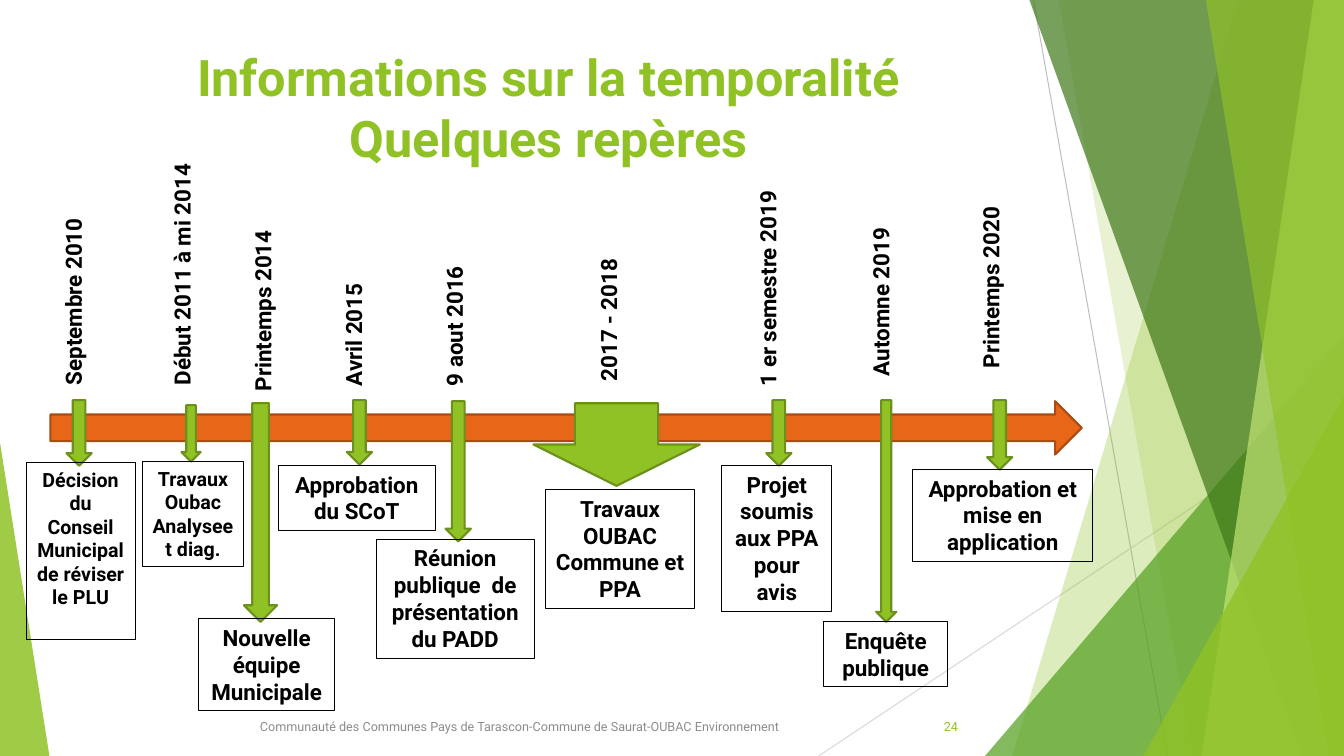
"""Draw a timeline of planning milestones."""
from dataclasses import dataclass

from lxml.etree import SubElement
from pptx import Presentation
from pptx.dml.color import RGBColor
from pptx.enum.shapes import MSO_CONNECTOR, MSO_SHAPE
from pptx.enum.text import MSO_ANCHOR, PP_ALIGN
from pptx.oxml.ns import qn
from pptx.util import Inches, Pt

Box = tuple[float, float, float, float]
WIDTH, HEIGHT = 13.33, 7.5
FONT = "Roboto"
BLACK = RGBColor(0x00, 0x00, 0x00)
GRAY = RGBColor(0x8C, 0x8C, 0x8C)
SILVER = RGBColor(0xBF, 0xBF, 0xBF)
PALE = RGBColor(0xD9, 0xD9, 0xD9)
LIME = RGBColor(0x90, 0xC2, 0x26)
OLIVE = RGBColor(0x6B, 0x90, 0x1C)
GREEN = RGBColor(0x54, 0xA0, 0x21)
FOREST = RGBColor(0x3F, 0x78, 0x19)
MINT = RGBColor(0xC0, 0xE4, 0x74)
ORANGE = RGBColor(0xE7, 0x66, 0x18)
RUST = RGBColor(0xAB, 0x4B, 0x12)


@dataclass
class Band:
    top: float
    base: float
    color: RGBColor
    alpha: int


@dataclass
class Wedge:
    box: Box
    peak: float
    color: RGBColor
    alpha: int


@dataclass
class Event:
    date: str
    label: Box
    arrow: Box
    text: str
    frame: Box
    size: int = 16


BANDS = [
    Band(12.28, 10.04, LIME, 30),
    Band(10.5, 11.83, LIME, 20),
    Wedge((9.77, 3.33, 3.56, 4.17), 1, GREEN, 72),
    Band(10.21, 12.91, FOREST, 70),
    Band(13.03, 11.92, MINT, 70),
    Band(11.96, 13.18, LIME, 65),
    Wedge((11.34, 3.93, 1.99, 3.57), 1, LIME, 80),
    Wedge((0, 4.39, 0.49, 3.11), 0, LIME, 85),
]

EVENTS = [
    Event("Septembre 2010", (0.54, 1.83, 0.47, 2.09), (0.66, 3.97, 0.25, 0.65),
          "Décision du Conseil Municipal de réviser le PLU", (0.26, 4.59, 1.08, 1.75), 14),
    Event("Début 2011 à mi 2014", (1.62, 1.3, 0.47, 2.62), (1.8, 4.02, 0.19, 0.56),
          "Travaux Oubac\nAnalyseet diag.", (1.41, 4.58, 1.01, 1.04), 14),
    Event("Printemps 2014", (2.42, 2, 0.47, 1.98), (2.42, 4, 0.33, 2.17),
          "Nouvelle équipe Municipale", (1.97, 6.14, 1.35, 0.91)),
    Event("Avril 2015", (3.32, 2.6, 0.47, 1.33), (3.44, 3.97, 0.25, 0.64),
          "Approbation du SCoT", (2.76, 4.62, 1.56, 0.64)),
    Event("9 aout 2016", (4.32, 2.26, 0.47, 1.67), (4.42, 3.98, 0.25, 1.39),
          "Réunion publique  de présentation du PADD", (3.73, 5.35, 1.57, 1.18)),
    Event("2017 - 2018", (5.85, 2.36, 0.47, 1.52), (5.29, 4, 1.65, 0.82),
          "Travaux OUBAC Commune et PPA", (5.41, 4.86, 1.48, 1.18)),
    Event("1 er semestre 2019", (7.43, 1.55, 0.47, 2.38), (7.6, 3.97, 0.25, 0.65),
          "Projet soumis aux PPA pour avis", (7.16, 4.62, 1.09, 1.45)),
    Event("Automne 2019", (8.55, 1.5, 0.47, 2.33), (8.69, 3.97, 0.2, 2.2),
          "Enquête publique", (8.17, 6.17, 1.23, 0.64)),
    Event("Printemps 2020", (9.64, 1.55, 0.47, 2.2), (9.79, 3.97, 0.25, 0.69),
          "Approbation et mise en application", (9.05, 4.66, 1.79, 0.91)),
]


def paint(shape, fill: RGBColor | None, line: RGBColor | None = None,
          weight: float = 1.5, alpha: int = 100) -> None:
    shape.shadow.inherit = False
    if fill is None:
        shape.fill.background()
    else:
        shape.fill.solid()
        shape.fill.fore_color.rgb = fill
        if alpha < 100:
            tint = shape.element.spPr.find(".//" + qn("a:srgbClr"))
            SubElement(tint, qn("a:alpha"), val=str(alpha * 1000))
    if line is None:
        shape.line.fill.background()
    else:
        shape.line.color.rgb = line
        shape.line.width = Pt(weight)


def draw(slide, kind: MSO_SHAPE, box: Box, fill: RGBColor | None, **style):
    shape = slide.shapes.add_shape(kind, *map(Inches, box))
    paint(shape, fill, **style)
    return shape


def write(shape, text: str, *, size: int = 16, color: RGBColor = BLACK, bold: bool = True,
          align: PP_ALIGN = PP_ALIGN.LEFT, anchor: MSO_ANCHOR = MSO_ANCHOR.TOP,
          turn: bool = False) -> None:
    frame = shape.text_frame
    frame.word_wrap = True
    frame.vertical_anchor = anchor
    if turn:
        frame._txBody.bodyPr.set("vert", "vert270")
    frame.text = text
    for para in frame.paragraphs:
        para.alignment = align
        for run in para.runs:
            font = run.font
            font.name, font.size, font.bold = FONT, Pt(size), bold
            font.color.rgb = color


def note(slide, box: Box, text: str, **style) -> None:
    write(slide.shapes.add_textbox(*map(Inches, box)), text, **style)


def rule(slide, start: tuple[float, float], end: tuple[float, float], color: RGBColor) -> None:
    line = slide.shapes.add_connector(MSO_CONNECTOR.STRAIGHT, *map(Inches, start + end))
    line.line.color.rgb = color
    line.line.width = Pt(0.75)
    SubElement(line.element.spPr, qn("a:effectLst"))


def add_band(slide, band: Band) -> None:
    pen = slide.shapes.build_freeform(Inches(band.top), 0)
    points = [(WIDTH, 0), (WIDTH, HEIGHT), (band.base, HEIGHT)]
    pen.add_line_segments([(Inches(x), Inches(y)) for x, y in points], close=True)
    paint(pen.convert_to_shape(), band.color, alpha=band.alpha)


def add_wedge(slide, wedge: Wedge) -> None:
    shape = draw(slide, MSO_SHAPE.ISOSCELES_TRIANGLE, wedge.box, wedge.color, alpha=wedge.alpha)
    shape.adjustments[0] = wedge.peak


def add_event(slide, event: Event) -> None:
    note(slide, event.label, event.date, turn=True)
    draw(slide, MSO_SHAPE.DOWN_ARROW, event.arrow, LIME, line=OLIVE)
    frame = draw(slide, MSO_SHAPE.RECTANGLE, event.frame, None, line=BLACK, weight=0.75)
    write(frame, event.text, size=event.size, align=PP_ALIGN.CENTER)


def main() -> None:
    deck = Presentation()
    deck.slide_width, deck.slide_height = Inches(WIDTH), Inches(HEIGHT)
    slide = deck.slides.add_slide(deck.slide_layouts[6])
    rule(slide, (10.25, 0), (11.58, HEIGHT), SILVER)
    rule(slide, (WIDTH, 4.03), (8.12, HEIGHT), PALE)
    for band in BANDS:
        if isinstance(band, Band):
            add_band(slide, band)
        else:
            add_wedge(slide, band)
    note(slide, (0.74, 0.41, 9.4, 1.7), "Informations sur la temporalité\vQuelques repères",
         size=36, color=LIME, align=PP_ALIGN.CENTER)
    draw(slide, MSO_SHAPE.RIGHT_ARROW, (0.5, 3.98, 10.23, 0.53), ORANGE, line=RUST)
    note(slide, (2.48, 7.01, 5.57, 0.4),
         "Communauté des Communes Pays de Tarascon-Commune de Saurat-OUBAC Environnement",
         size=9, color=GRAY, bold=False, anchor=MSO_ANCHOR.MIDDLE)
    note(slide, (8.85, 7.01, 0.75, 0.4), "24", size=9, color=LIME, bold=False,
         align=PP_ALIGN.RIGHT, anchor=MSO_ANCHOR.MIDDLE)
    for event in EVENTS:
        add_event(slide, event)
    deck.save("out.pptx")


if __name__ == "__main__":
    main()
